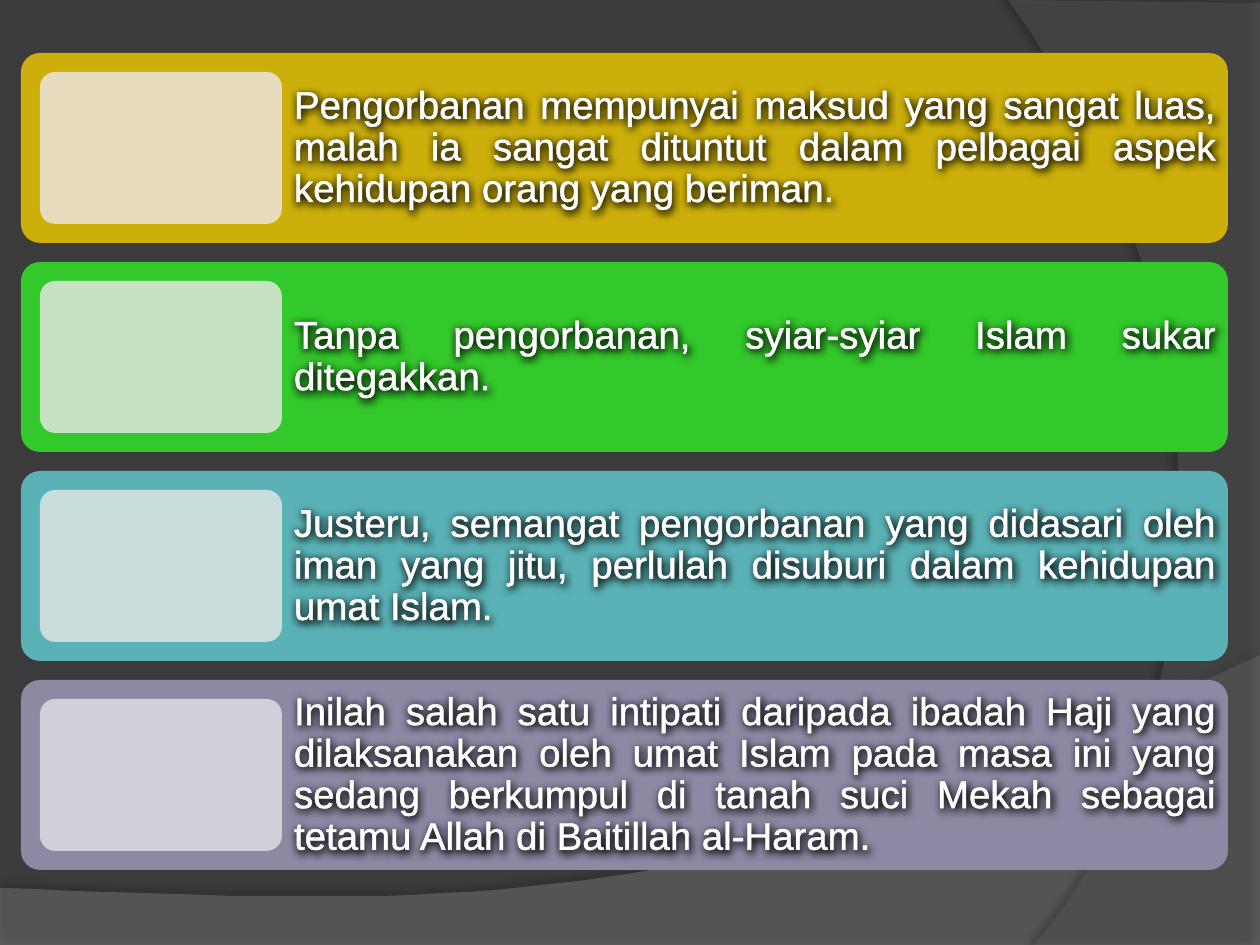
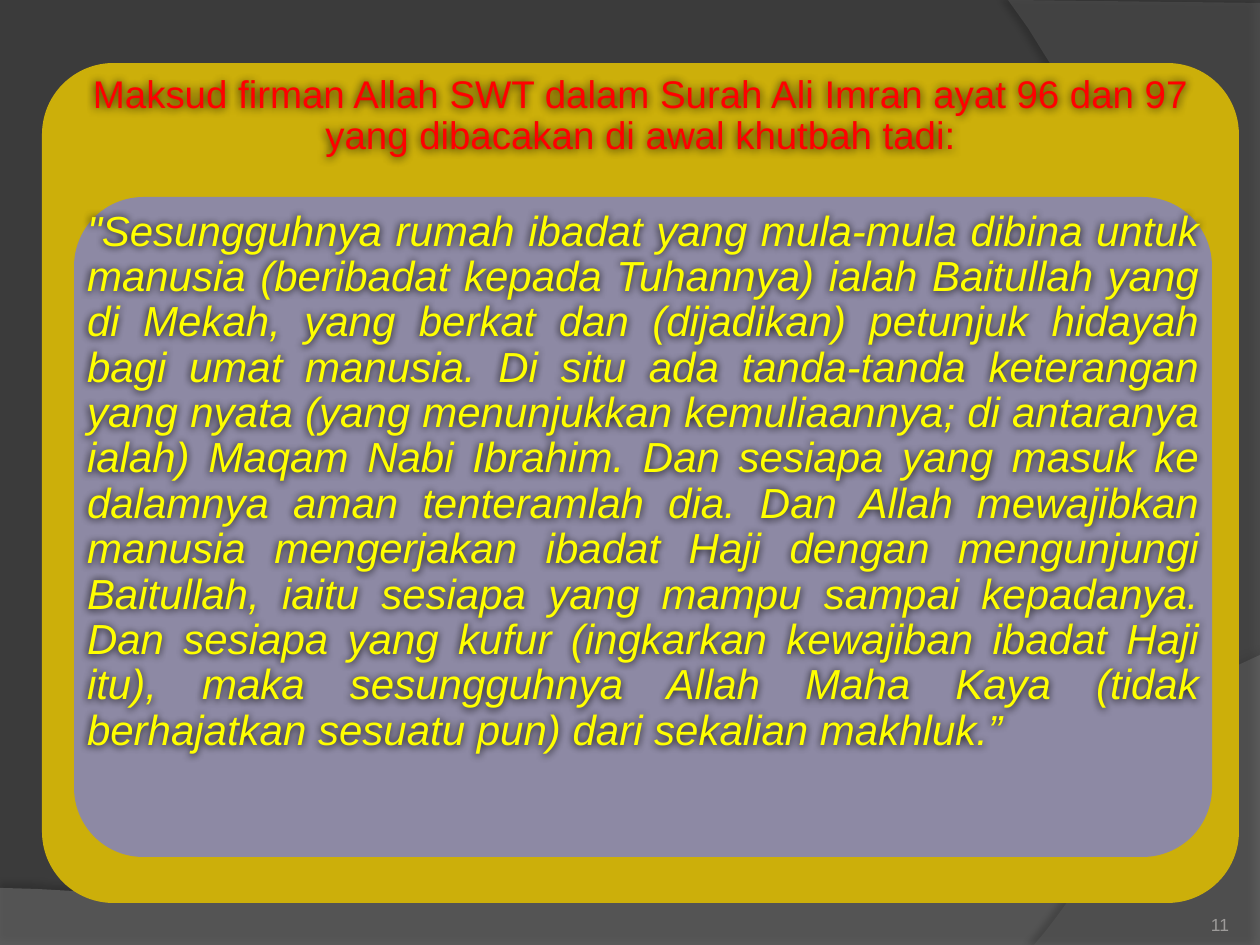
from lxml.etree import SubElement
from pptx import Presentation
from pptx.dml.color import RGBColor
from pptx.enum.shapes import MSO_SHAPE
from pptx.enum.text import MSO_ANCHOR as Anchor, MSO_AUTO_SIZE, PP_ALIGN as Align
from pptx.oxml.ns import qn
from pptx.util import Emu, Pt

PX = 914400 / 126
SLIDE_SIZE = (1260, 945)
FONT = "Arial"
TITLE_ONLY, BLANK = 5, 6

COLORS = {
    "background": "3B3B3B", "wave": "7F7F7F", "arc": "5E5E5E", "black": "000000",
    "gold": "CCAF0A", "green": "33C82B", "teal": "5AB2B6", "mauve": "8D89A4",
    "pale gold": "E7DCBD", "pale green": "C7E2C3", "pale teal": "CADDDD",
    "pale mauve": "D1D0D8", "white": "FFFFFF", "red": "FF0000",
    "yellow": "FFFF00", "number": "9D9B9A",
}

# Each outline: straight points, then the two controls and the end of a closing curve
BACKDROP = [
    {"color": "wave", "opacity": 45,
     "line": [(0, 888), (0, 946), (1260, 946), (1260, 655)],
     "curve": [(704, 919), (493, 906), (0, 888)],
     "shadow": {"opacity": 35, "blur": 4, "distance": 3.5, "angle": 270}},
    {"color": "arc", "opacity": 40,
     "line": [(1260, 3), (1260, 945), (1034, 945)],
     "curve": [(1178, 780), (1283, 378), (1008, 0)],
     "shadow": {"opacity": 45, "blur": 4, "distance": 4, "angle": 180}},
]
TEXT_SHADOW = {"opacity": 90, "blur": 5, "distance": 1, "angle": 90}

MESSAGES = [
    ("gold", "Pengorbanan mempunyai maksud yang sangat luas, malah ia sangat dituntut "
             "dalam pelbagai aspek kehidupan orang yang beriman."),
    ("green", "Tanpa pengorbanan, syiar-syiar Islam sukar ditegakkan."),
    ("teal", "Justeru, semangat pengorbanan yang didasari oleh iman yang jitu, perlulah "
             "disuburi dalam kehidupan umat Islam."),
    ("mauve", "Inilah salah satu intipati daripada ibadah Haji yang dilaksanakan oleh umat "
              "Islam pada masa ini yang sedang berkumpul di tanah suci Mekah sebagai tetamu "
              "Allah di Baitillah al-Haram."),
]
CARD_LEFT, CARD_TOP, CARD_WIDTH, CARD_HEIGHT = 21, 53, 1207, 190
CARD_GAP = CARD_MARGIN = 19
THUMB_WIDTH = 242

HEADING = ("Maksud firman Allah SWT dalam Surah Ali Imran ayat 96 dan 97 "
           "yang dibacakan di awal khutbah tadi:")
VERSE = (
    "\"Sesungguhnya rumah ibadat yang mula-mula dibina untuk manusia (beribadat kepada "
    "Tuhannya) ialah Baitullah yang di Mekah, yang berkat dan (dijadikan) petunjuk hidayah "
    "bagi umat manusia. Di situ ada tanda-tanda keterangan yang nyata (yang menunjukkan "
    "kemuliaannya; di antaranya ialah) Maqam Nabi Ibrahim. Dan sesiapa yang masuk ke dalamnya "
    "aman tenteramlah dia. Dan Allah mewajibkan manusia mengerjakan ibadat Haji dengan "
    "mengunjungi Baitullah, iaitu sesiapa yang mampu sampai kepadanya. Dan sesiapa yang kufur "
    "(ingkarkan kewajiban ibadat Haji itu), maka sesungguhnya Allah Maha Kaya (tidak "
    "berhajatkan sesuatu pun) dari sekalian makhluk.”"
)
OUTER_PANEL = (42, 63, 1197, 840)
INNER_PANEL = (74, 197, 1138, 660)
PAGE_NUMBER, PAGE_NUMBER_BOX = "11", (1124, 885, 105, 50)


def emu(*lengths):
    return [Emu(round(length * PX)) for length in lengths]


def rgb(name):
    return RGBColor.from_string(COLORS[name])


def add_color(parent, name, opacity=100):
    color = SubElement(parent, qn("a:srgbClr"), val=COLORS[name])
    if opacity < 100:
        SubElement(color, qn("a:alpha"), val=str(opacity * 1000))


def add_shadow(shape, opacity, blur, distance, angle):
    shape.shadow.inherit = False
    effects = shape.element.xpath(".//a:effectLst")[0]
    shadow = SubElement(effects, qn("a:outerShdw"), blurRad=str(Pt(blur)),
                        dist=str(Pt(distance)), dir=str(angle * 60000),
                        algn="ctr", rotWithShape="0")
    add_color(shadow, "black", opacity)


def curve_points(start, first, second, end, steps=40):
    """Points along a cubic Bezier curve, without its start."""
    for step in range(1, steps + 1):
        t = step / steps
        weights = ((1 - t) ** 3, 3 * t * (1 - t) ** 2, 3 * t * t * (1 - t), t ** 3)
        yield tuple(sum(weight * value for weight, value in zip(weights, axis))
                    for axis in zip(start, first, second, end))


def add_backdrop(master, slide):
    """Draw the outlines on a slide, then move them to the back of the master."""
    master.background.fill.solid()
    master.background.fill.fore_color.rgb = rgb("background")
    for position, part in enumerate(BACKDROP, start=2):
        line = part["line"]
        builder = slide.shapes.build_freeform(*line[0], scale=PX)
        builder.add_line_segments(line[1:] + list(curve_points(line[-1], *part["curve"])))
        outline = builder.convert_to_shape()
        outline.fill.solid()
        outline.fill.fore_color.rgb = rgb(part["color"])
        fill_color = outline.element.xpath("./p:spPr/a:solidFill/a:srgbClr")[0]
        SubElement(fill_color, qn("a:alpha"), val=str(part["opacity"] * 1000))
        outline.line.fill.background()
        add_shadow(outline, **part["shadow"])
        master.shapes.element.insert(position, outline.element)


def add_panel(slide, box, color, rounding):
    panel = slide.shapes.add_shape(MSO_SHAPE.ROUNDED_RECTANGLE, *emu(*box))
    panel.adjustments[0] = rounding
    panel.fill.solid()
    panel.fill.fore_color.rgb = rgb(color)
    panel.line.fill.background()
    panel.shadow.inherit = False


def write_text(shape, text, size, color, align, anchor=Anchor.TOP, inset=12, italic=None):
    frame = shape.text_frame
    frame.word_wrap = True
    frame.auto_size = MSO_AUTO_SIZE.NONE
    frame.vertical_anchor = anchor
    frame.margin_left = frame.margin_top = frame.margin_right = frame.margin_bottom = emu(inset)[0]
    paragraph = frame.paragraphs[0]
    paragraph.text = text
    paragraph.alignment = align
    paragraph.line_spacing = 0.9
    font = paragraph.font
    font.name, font.size, font.italic = FONT, Pt(size), italic
    font.color.rgb = rgb(color)


def add_glow_text(shape, text, size, color, align, outline="white", **options):
    """Write outlined text whose letters cast a soft shadow."""
    write_text(shape, text, size, color, align, **options)
    properties = shape.element.xpath(".//a:defRPr")[0]
    line = SubElement(properties, qn("a:ln"), w=str(Pt(1.45)))
    add_color(SubElement(line, qn("a:solidFill")), outline)
    properties.insert(0, line)
    add_shadow(shape, **TEXT_SHADOW)


def add_message_cards(slide):
    for row, (color, text) in enumerate(MESSAGES):
        top = CARD_TOP + row * (CARD_HEIGHT + CARD_GAP)
        add_panel(slide, (CARD_LEFT, top, CARD_WIDTH, CARD_HEIGHT), color, 0.1)
        thumb_left = CARD_LEFT + CARD_MARGIN
        text_left = thumb_left + THUMB_WIDTH
        text_width = CARD_LEFT + CARD_WIDTH - text_left
        text_box = slide.shapes.add_textbox(*emu(text_left, top, text_width, CARD_HEIGHT))
        add_glow_text(text_box, text, 22, "white", Align.JUSTIFY, anchor=Anchor.MIDDLE)
        add_panel(slide, (thumb_left, top + CARD_MARGIN, THUMB_WIDTH,
                          CARD_HEIGHT - 2 * CARD_MARGIN), f"pale {color}", 0.1)


def add_verse(slide):
    number_box = slide.shapes.add_textbox(*emu(*PAGE_NUMBER_BOX))
    write_text(number_box, PAGE_NUMBER, 10, "number", Align.RIGHT, anchor=Anchor.BOTTOM, inset=0)

    add_panel(slide, OUTER_PANEL, "gold", 0.085)
    title = slide.shapes.title
    title.left, title.top, title.width, title.height = emu(*OUTER_PANEL)
    title.fill.background()
    add_glow_text(title, HEADING, 22, "red", Align.CENTER, outline="red")
    slide.shapes.element.append(title.element)

    add_panel(slide, INNER_PANEL, "mauve", 0.105)
    verse_box = slide.shapes.add_textbox(*emu(*INNER_PANEL))
    add_glow_text(verse_box, VERSE, 24, "yellow", Align.JUSTIFY, inset=13, italic=True)


def main():
    presentation = Presentation()
    presentation.slide_width, presentation.slide_height = emu(*SLIDE_SIZE)
    layouts = presentation.slide_layouts
    message_slide = presentation.slides.add_slide(layouts[BLANK])
    add_backdrop(presentation.slide_master, message_slide)
    add_message_cards(message_slide)
    add_verse(presentation.slides.add_slide(layouts[TITLE_ONLY]))
    presentation.save("out.pptx")


if __name__ == "__main__":
    main()
